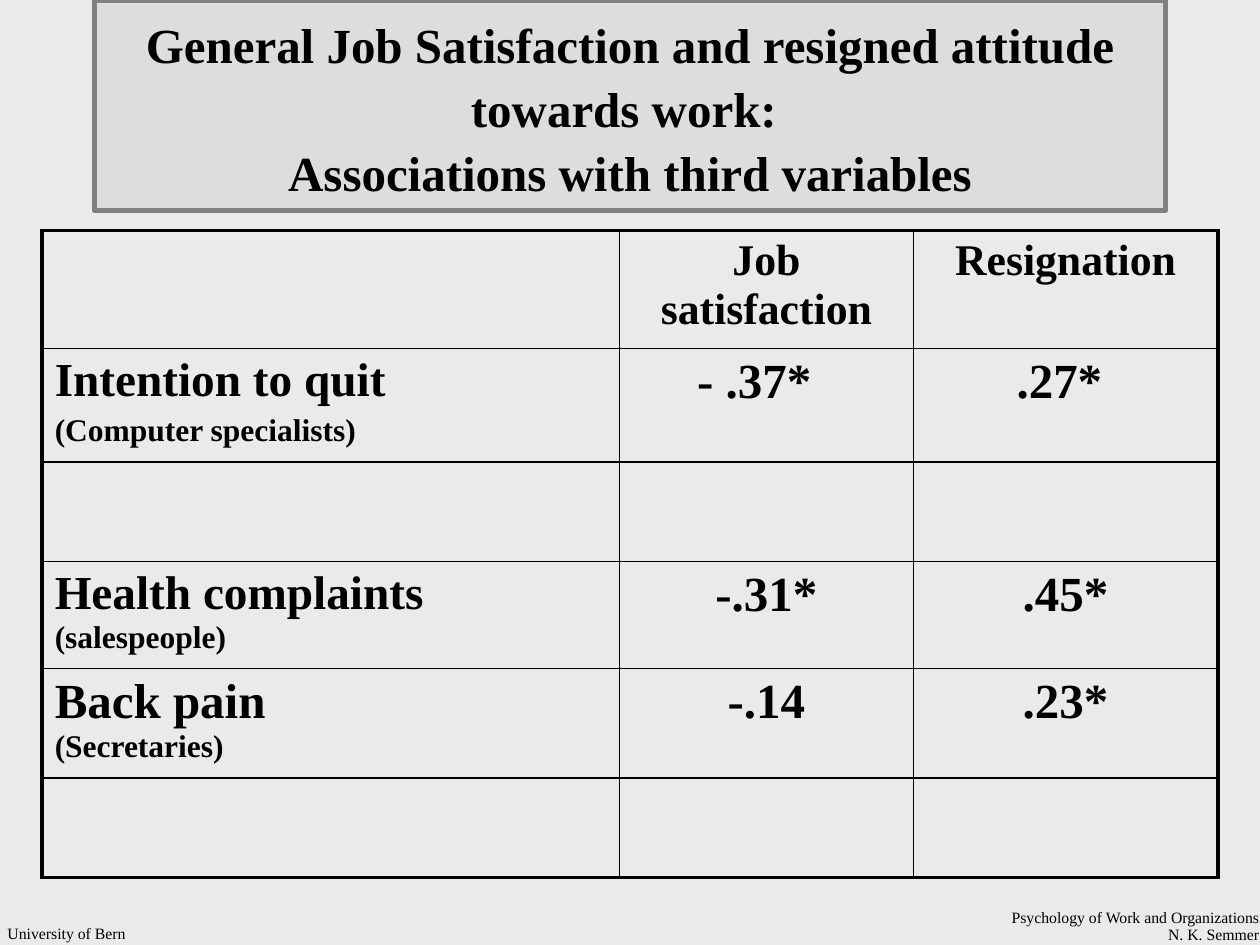
from lxml import etree
from pptx import Presentation
from pptx import util as u
from pptx.dml.color import RGBColor
from pptx.enum import shapes, text
from pptx.oxml import ns

BACKGROUND = RGBColor(0xEA, 0xEA, 0xEA)
TITLE_FILL = RGBColor(0xDD, 0xDD, 0xDD)
TITLE_EDGE = RGBColor(0x80, 0x80, 0x80)
BLACK = RGBColor(0, 0, 0)
FONT = "Times New Roman"
LEFT, CENTER, RIGHT = text.PP_ALIGN.LEFT, text.PP_ALIGN.CENTER, text.PP_ALIGN.RIGHT
THIN, THICK = 1, 2.25
BREAK = None

HEADINGS = ["Job satisfaction", "Resignation"]
# Each row: label paragraphs (lists of (wording, size) or BREAK), then values
ROWS = [
    ([[("Intention to quit", 27)], [("(Computer specialists)", 18)]], ["- .37*", ".27* "]),
    ([], []),
    ([[("Health complaints", 27), BREAK, ("(salespeople)", 18)]], ["-.31*", ".45*"]),
    ([[("Back pain", 28), BREAK, ("(Secretaries)", 18)]], ["-.14", ".23*"]),
    ([], []),
]
COLUMN_WIDTHS = [11.64, 5.92, 6.14]
ROW_HEIGHT = 2.01


def write(frame, paragraphs, align=LEFT, bold=True, line_spacing=None):
    """Fill a text frame; paragraphs after the first get 20% of their size before them."""
    for index, parts in enumerate(paragraphs):
        paragraph = frame.add_paragraph() if index else frame.paragraphs[0]
        paragraph.alignment = align
        if line_spacing:
            paragraph.line_spacing = line_spacing
        if index:
            paragraph.space_before = u.Pt(0.2 * parts[0][1])
        for part in parts:
            if part is BREAK:
                paragraph.add_line_break()
                continue
            run = paragraph.add_run()
            run.text, size = part
            run.font.name = FONT
            run.font.size = u.Pt(size)
            run.font.bold = bold
            run.font.color.rgb = BLACK


def add_title(slide, left, top, width, height):
    title = slide.shapes.add_shape(shapes.MSO_SHAPE.RECTANGLE,
                                   u.Cm(left), u.Cm(top), u.Cm(width), u.Cm(height))
    title.shadow.inherit = False
    title.fill.solid()
    title.fill.fore_color.rgb = TITLE_FILL
    title.line.color.rgb = TITLE_EDGE
    title.line.width = u.Pt(3)
    title.text_frame.word_wrap = True
    title.text_frame.vertical_anchor = text.MSO_ANCHOR.MIDDLE
    write(title.text_frame,
          [[("General Job Satisfaction and resigned attitude towards work: ", 28), BREAK,
            ("Associations with third variables", 28)]],
          CENTER, line_spacing=1.09)


def set_borders(cell, widths):
    """Draw the sides in the order left, right, top, bottom, widths in points."""
    properties = cell._tc.get_or_add_tcPr()
    for index, (side, width) in enumerate(zip(("lnL", "lnR", "lnT", "lnB"), widths)):
        line = etree.Element(ns.qn(f"a:{side}"), w=str(u.Pt(width)))
        fill = etree.SubElement(line, ns.qn("a:solidFill"))
        etree.SubElement(fill, ns.qn("a:srgbClr"), val=str(BLACK))
        properties.insert(index, line)


def add_association_table(slide, left, top):
    row_count, column_count = len(ROWS) + 1, len(COLUMN_WIDTHS)
    table = slide.shapes.add_table(row_count, column_count, u.Cm(left), u.Cm(top),
                                   u.Cm(sum(COLUMN_WIDTHS)),
                                   u.Cm(ROW_HEIGHT * row_count)).table
    table.first_row = table.horz_banding = False
    for column, width in zip(table.columns, COLUMN_WIDTHS):
        column.width = u.Cm(width)
    for r, row in enumerate(table.rows):
        row.height = u.Cm(ROW_HEIGHT)
        for c, cell in enumerate(row.cells):
            cell.fill.background()
            outer = (c == 0, c == column_count - 1, r == 0, r == row_count - 1)
            set_borders(cell, [THICK if edge else THIN for edge in outer])

    for c, heading in enumerate(HEADINGS, 1):
        write(table.cell(0, c).text_frame, [[(heading, 25)]], CENTER)
    for r, (label, values) in enumerate(ROWS, 1):
        write(table.cell(r, 0).text_frame, label)
        for c, value in enumerate(values, 1):
            write(table.cell(r, c).text_frame, [[(value, 28)]], CENTER)
    table.cell(1, 1).margin_right = u.Cm(0.75)


def add_footer(slide, left, top, width, lines, align, line_spacing=None):
    footer = slide.shapes.add_textbox(u.Cm(left), u.Cm(top), u.Cm(width), u.Cm(0.84))
    footer.text_frame.word_wrap = True
    parts = [(lines[0], 9)]
    for line in lines[1:]:
        parts += [BREAK, (line, 9)]
    write(footer.text_frame, [parts], align, bold=False, line_spacing=line_spacing)


def main():
    deck = Presentation()
    deck.slide_width, deck.slide_height = u.Cm(25.4), u.Cm(19.05)
    slide = deck.slides.add_slide(deck.slide_layouts[6])
    slide.background.fill.solid()
    slide.background.fill.fore_color.rgb = BACKGROUND

    add_footer(slide, 13.77, 18.21, 11.86,
               ["Psychology of Work and Organizations", "N. K. Semmer"], RIGHT, 0.9)
    add_footer(slide, -0.1, 18.49, 11.43, ["University of Bern"], LEFT)
    add_title(slide, 1.9, 0, 21.6, 4.24)
    add_association_table(slide, 0.85, 4.65)
    deck.save("out.pptx")


if __name__ == "__main__":
    main()
